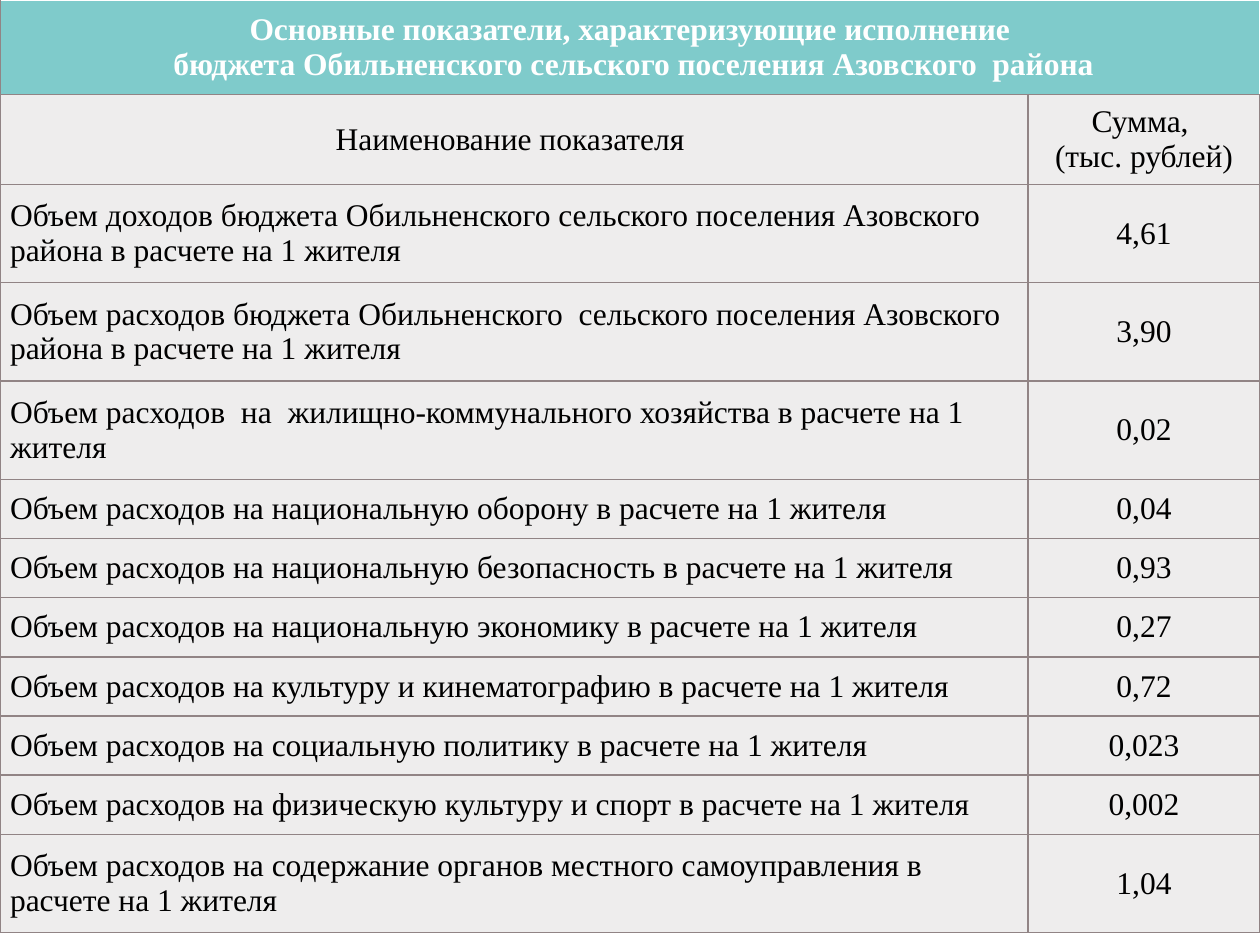
from lxml.etree import SubElement as Sub
from pptx import Presentation
from pptx.dml.color import RGBColor
from pptx.enum.text import MSO_ANCHOR as Anchor, PP_ALIGN as Align
from pptx.oxml.ns import qn
from pptx.util import Pt

PX = 9144  # 100 px to the inch
FONT = "Times New Roman"
TEAL = RGBColor(0x00, 0x99, 0x99)
GRAY = RGBColor(0xEE, 0xED, 0xED)
LINE = RGBColor(0x91, 0x84, 0x85)
WHITE = RGBColor(0xFF, 0xFF, 0xFF)
BLACK = RGBColor(0x00, 0x00, 0x00)

TITLE = ["Основные показатели, характеризующие исполнение",
         " бюджета Обильненского сельского поселения Азовского  района"]
HEADS = [["Наименование показателя "], ["Сумма, ", "(тыс. рублей)"]]
# Row height, indicator, amount
ROWS = [
    (78, "Объем доходов бюджета Обильненского сельского поселения Азовского  района в расчете на 1 жителя", "4,61"),
    (78, "Объем расходов бюджета Обильненского  сельского поселения Азовского района в расчете на 1 жителя", "3,90"),
    (78, "Объем расходов  на  жилищно-коммунального хозяйства в расчете на 1 жителя", "0,02"),
    (47, "Объем расходов на национальную оборону в расчете на 1 жителя", "0,04"),
    (47, "Объем расходов на национальную безопасность в расчете на 1 жителя", "0,93"),
    (47, "Объем расходов на национальную экономику в расчете на 1 жителя", "0,27"),
    (47, "Объем расходов на культуру и кинематографию в расчете на 1 жителя", "0,72"),
    (47, "Объем расходов на социальную политику в расчете на 1 жителя", "0,023"),
    (47, "Объем расходов на физическую культуру и спорт в расчете на 1 жителя", "0,002"),
    (78, "Объем расходов на содержание органов местного самоуправления в расчете на 1 жителя", "1,04"),
]
COLS = [816, 184]
HIGHS = [75, 71] + [row[0] for row in ROWS]


def add_edges(cell, sides):
    props = cell._tc.get_or_add_tcPr()
    for side in sides:
        edge = Sub(props, qn("a:ln" + side), w=str(Pt(1)))
        Sub(Sub(edge, qn("a:solidFill")), qn("a:srgbClr"), val=str(LINE))


def fill_cell(cell, lines, align=Align.CENTER, back=GRAY, ink=BLACK,
              bold=False, sides="LRTB"):
    add_edges(cell, sides)
    cell.fill.solid()
    cell.fill.fore_color.rgb = back
    cell.vertical_anchor = Anchor.MIDDLE
    cell.margin_left = cell.margin_right = 8 * PX
    cell.margin_top = cell.margin_bottom = 8 * PX
    frame = cell.text_frame
    for i, line in enumerate(lines):
        para = frame.add_paragraph() if i else frame.paragraphs[0]
        para.alignment = align
        run = para.add_run()
        run.text = line
        font = run.font
        font.name, font.size, font.bold = FONT, Pt(18), bold
        font.color.rgb = ink


def add_budget(slide, x, y, w, h):
    frame = slide.shapes.add_table(len(HIGHS), len(COLS),
                                   x * PX, y * PX, w * PX, h * PX)
    table = frame.table
    table.horz_banding = False
    for col, wide in zip(table.columns, COLS):
        col.width = wide * PX
    for row, high in zip(table.rows, HIGHS):
        row.height = high * PX

    # Half-transparent title across both columns
    top = table.cell(0, 0)
    top.merge(table.cell(0, 1))
    fill_cell(top, TITLE, back=TEAL, ink=WHITE, bold=True, sides="LB")
    tint = top._tc.tcPr.find(qn("a:solidFill")).find(qn("a:srgbClr"))
    Sub(tint, qn("a:alpha"), val="50000")

    # Column heads
    for c, lines in enumerate(HEADS):
        fill_cell(table.cell(1, c), lines)

    # Indicators
    for r, (_, name, sum_) in enumerate(ROWS, 2):
        fill_cell(table.cell(r, 0), [name], align=Align.LEFT)
        fill_cell(table.cell(r, 1), [sum_])


def main():
    deck = Presentation()
    deck.slide_width, deck.slide_height = 1000 * PX, 750 * PX
    slide = deck.slides.add_slide(deck.slide_layouts[6])
    add_budget(slide, 0, 0, sum(COLS), sum(HIGHS))
    deck.save("out.pptx")


if __name__ == "__main__":
    main()
